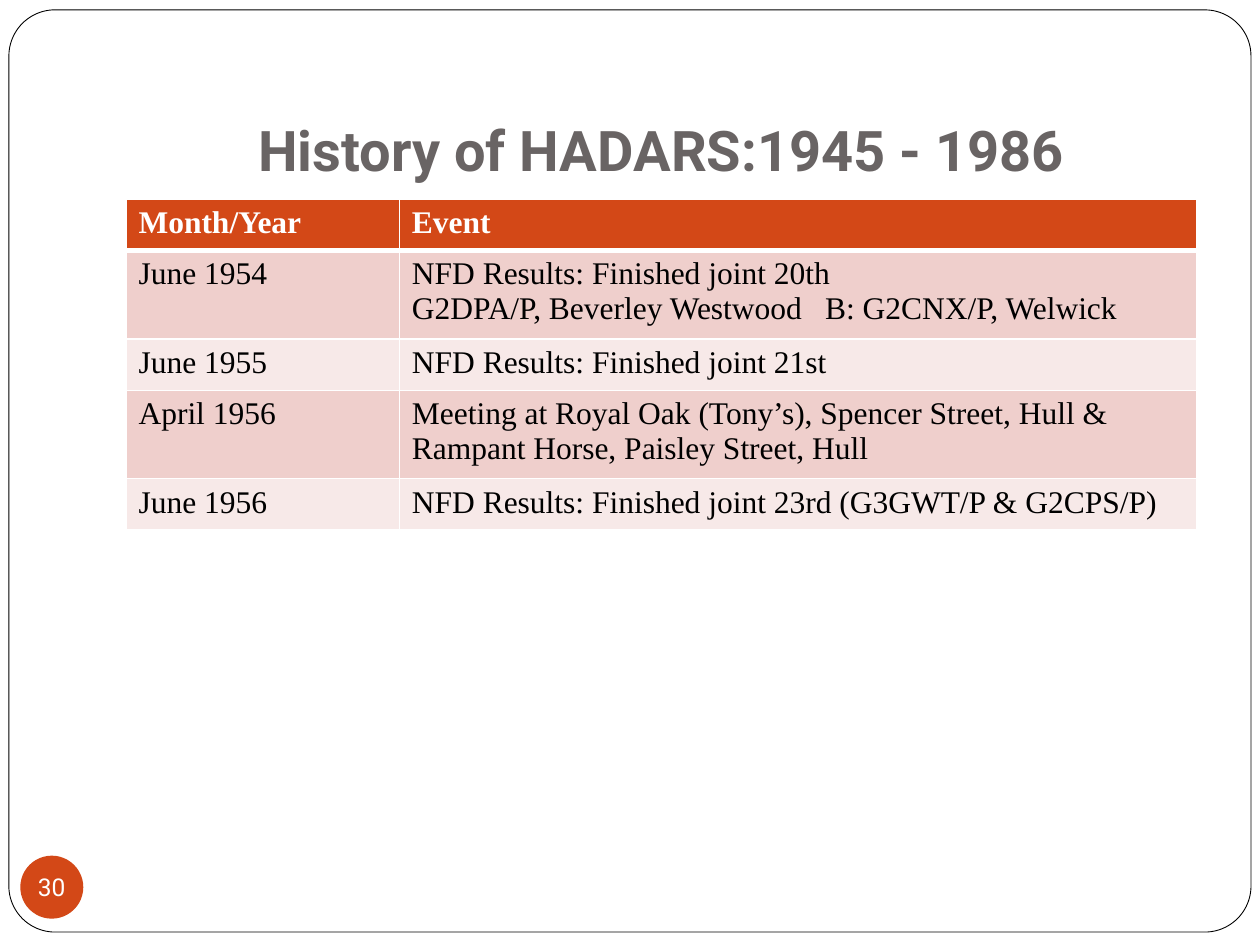
from lxml.etree import SubElement
from pptx import Presentation
from pptx.dml.color import RGBColor
from pptx.enum.shapes import MSO_SHAPE as Shape
from pptx.enum.text import MSO_ANCHOR as Anchor, PP_ALIGN as Align
from pptx.oxml.ns import qn
from pptx.util import Cm, Pt

COLORS = {
    "white": "FFFFFF",
    "black": "000000",
    "title": "696464",
    "accent": "D34817",
    "band_dark": "EFCFCC",
    "band_light": "F7E9E8",
}
HEADING_FONT, TABLE_FONT = "Roboto", "Times New Roman"
LINE_HEIGHT, ROW_PADDING = 0.62, 0.42
EVENTS = [
    # month and year, event, lines of text in the row
    ("Month/Year", "Event", 1),
    ("June 1954", "NFD Results: Finished joint 20th\n"
                  "G2DPA/P, Beverley Westwood\tB: G2CNX/P, Welwick", 2),
    ("June 1955", "NFD Results: Finished joint 21st", 1),
    ("April 1956", "Meeting at Royal Oak (Tony’s), Spencer Street, Hull & "
                   "Rampant Horse, Paisley Street, Hull", 2),
    ("June 1956", "NFD Results: Finished joint 23rd (G3GWT/P & G2CPS/P)", 1),
]


def color(name):
    return RGBColor.from_string(COLORS[name])


def style_font(font, name, size, color_name, bold=False):
    font.name, font.size, font.bold = name, Pt(size), bold
    font.color.rgb = color(color_name)


def set_insets(text_frame, left, top, right, bottom):
    text_frame.margin_left, text_frame.margin_top = Cm(left), Cm(top)
    text_frame.margin_right, text_frame.margin_bottom = Cm(right), Cm(bottom)


def add_filled_shape(slide, kind, box, fill):
    shape = slide.shapes.add_shape(kind, *map(Cm, box))
    shape.shadow.inherit = False
    shape.fill.solid()
    shape.fill.fore_color.rgb = color(fill)
    return shape


def add_frame(slide, box):
    frame = add_filled_shape(slide, Shape.ROUNDED_RECTANGLE, box, "white")
    frame.adjustments[0] = 0.05
    frame.line.color.rgb = color("black")
    frame.line.width = Pt(0.5)


def add_title(slide, box, text):
    text_frame = slide.shapes.add_textbox(*map(Cm, box)).text_frame
    text_frame.word_wrap = True
    text_frame.vertical_anchor = Anchor.BOTTOM
    set_insets(text_frame, 0.25, 0.13, 0.25, 0.25)
    text_frame.text = text
    paragraph = text_frame.paragraphs[0]
    paragraph.alignment = Align.CENTER
    style_font(paragraph.runs[0].font, HEADING_FONT, 32, "title", bold=True)


def set_borders(cell, **widths):
    properties = cell._tc.get_or_add_tcPr()
    for side, width in widths.items():
        line = SubElement(properties, qn(f"a:ln{side}"), w=str(Pt(width)))
        fill = SubElement(line, qn("a:solidFill"))
        SubElement(fill, qn("a:srgbClr"), val=COLORS["white"])


def add_tab_stop(paragraph, position):
    stops = SubElement(paragraph._p.get_or_add_pPr(), qn("a:tabLst"))
    SubElement(stops, qn("a:tab"), pos=str(Cm(position)), algn="l")


def fill_cell(cell, text, row):
    is_header = row == 0
    set_borders(cell, L=1, R=1, T=3 if row == 1 else 1, B=3 if is_header else 1)
    cell.fill.solid()
    band = "band_dark" if row % 2 else "band_light"
    cell.fill.fore_color.rgb = color("accent" if is_header else band)
    cell.text = text
    for paragraph in cell.text_frame.paragraphs:
        if "\t" in paragraph.text:
            add_tab_stop(paragraph, 8.33)
        for run in paragraph.runs:
            style_font(run.font, TABLE_FONT, 18,
                       "white" if is_header else "black", bold=is_header)


def add_events_table(slide, box, date_width):
    left, top, width = box
    heights = [ROW_PADDING + LINE_HEIGHT * lines for *_, lines in EVENTS]
    table = slide.shapes.add_table(len(EVENTS), 2, Cm(left), Cm(top),
                                   Cm(width), Cm(sum(heights))).table
    table.columns[0].width = Cm(date_width)
    table.columns[1].width = Cm(width - date_width)
    for row, (date, event, _) in enumerate(EVENTS):
        table.rows[row].height = Cm(heights[row])
        for column, text in enumerate((date, event)):
            fill_cell(table.cell(row, column), text, row)


def add_page_number(slide, box, number):
    badge = add_filled_shape(slide, Shape.OVAL, box, "accent")
    badge.line.fill.background()
    text_frame = badge.text_frame
    text_frame.word_wrap = False
    text_frame.vertical_anchor = Anchor.MIDDLE
    set_insets(text_frame, 0, 0, 0, 0)
    text_frame.text = str(number)
    paragraph = text_frame.paragraphs[0]
    paragraph.alignment = Align.CENTER
    style_font(paragraph.runs[0].font, HEADING_FONT, 14, "white")


def main():
    presentation = Presentation()
    presentation.slide_width, presentation.slide_height = Cm(25.4), Cm(19.05)
    slide = presentation.slides.add_slide(presentation.slide_layouts[6])
    add_frame(slide, (0.18, 0.2, 25.04, 18.59))
    add_title(slide, (2.54, 0.76, 21.59, 3.18), "History of HADARS:1945 - 1986")
    add_events_table(slide, (2.54, 4.01, 21.59), date_width=5.51)
    add_page_number(slide, (0.41, 17.25, 1.27, 1.27), 30)
    presentation.save("out.pptx")


if __name__ == "__main__":
    main()
